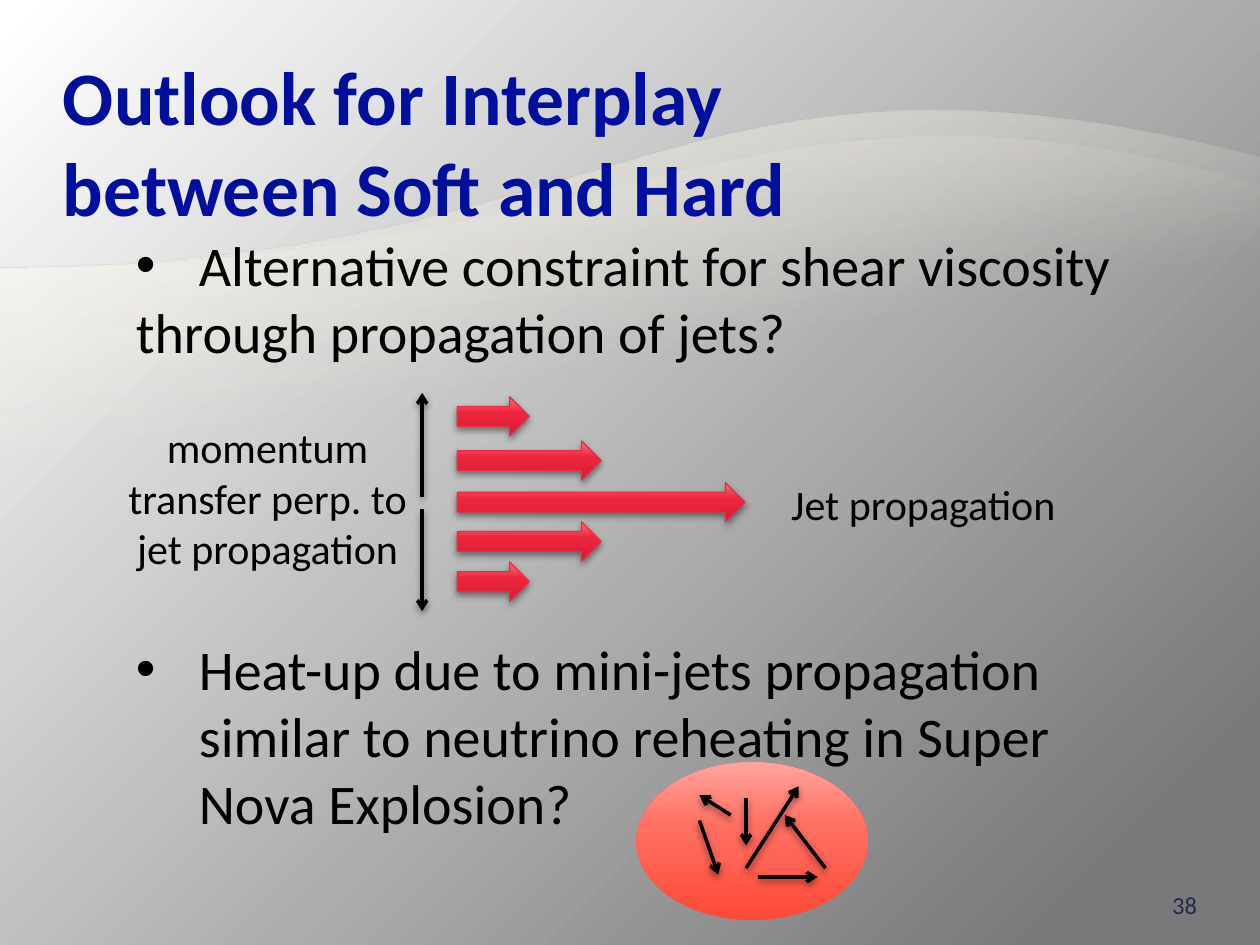
"""Builds the slide on the interplay between soft and hard physics."""
from dataclasses import dataclass, field
from typing import Any

from lxml.etree import SubElement
from pptx import Presentation
from pptx.dml.color import RGBColor
from pptx.enum.shapes import MSO_CONNECTOR as CONN, MSO_SHAPE as SHAPE
from pptx.enum.text import MSO_ANCHOR as ANCHOR, PP_ALIGN as ALIGN
from pptx.oxml.ns import qn
from pptx.util import Cm, Pt

FONT = "Calibri"
BLACK = "000000"
HANG = 1.27
RED_STOPS = [(0, "D71B32"), (60, "ED263E"), (100, "FD727C")]
BALL_STOPS = [(0, "FF4938"), (60, "FF6F61"), (100, "FFA49E")]


@dataclass
class Para:
    text: str
    bullet: bool = False
    fmt: dict[str, Any] = field(default_factory=dict)


@dataclass
class Label:
    box: tuple[float, float, float, float]
    paras: list[Para]
    font: dict[str, Any]
    color: str = BLACK
    frame: dict[str, Any] = field(default_factory=dict)


@dataclass
class Wave:
    start: tuple[float, float]
    controls: tuple[tuple[float, float], tuple[float, float]]
    end: tuple[float, float]
    bottom: float
    stops: list[tuple]


@dataclass
class Jet:
    top: float
    units: int


@dataclass
class Ray:
    x1: float
    y1: float
    x2: float
    y2: float


WAVES = [
    Wave((0, 5.41), ((12.7, 5.41), (13.56, 0.13)), (25.4, 3.18), 18.62,
         [(65, "FFF9E5", 0), (100, "FFFCF1", 55)]),
    Wave((0, 5.41), ((12.7, 5.41), (15.19, 0.79)), (25.4, 3.73), 16.18,
         [(65, "FFF9E5", 0), (100, "FFFDF5", 30)]),
]
JETS = [Jet(8, 1), Jet(8.89, 2), Jet(9.73, 4), Jet(10.52, 2), Jet(11.33, 1)]
RAYS = [
    Ray(8.51, 10.01, 8.51, 7.92),
    Ray(8.51, 10.26, 8.51, 12.32),
    Ray(15.04, 17.5, 16.1, 15.85),
    Ray(16.64, 17.5, 15.82, 16.43),
    Ray(14.1, 16.54, 14.48, 17.63),
    Ray(15.29, 17.68, 16.48, 17.68),
    Ray(14.73, 16.43, 14.1, 16.03),
    Ray(15.04, 16.08, 15.04, 17.04),
]
CENTER = {"alignment": ALIGN.CENTER}
LABELS = [
    Label((1.27, 1.52, 22.86, 3.18),
          [Para("Outlook for Interplay\vbetween Soft and Hard")],
          {"size": Pt(43.2), "bold": True}, "020E9C",
          {"vertical_anchor": ANCHOR.BOTTOM, "margin_left": 0, "margin_right": 0,
           "margin_top": Cm(0.03), "margin_bottom": Cm(0.03)}),
    Label((2.49, 4.52, 21.41, 12.57),
          [Para("Alternative constraint for shear viscosity", True),
           Para("through propagation of jets?"),
           Para("Heat-up due to mini-jets propagation similar to neutrino "
                "reheating in Super Nova Explosion?", True,
                {"space_before": Pt(154)})],
          {"size": Pt(32)}),
    Label((15.7, 9.53, 6.07, 1.27), [Para("Jet propagation")],
          {"size": Pt(24)}, frame={"word_wrap": False}),
    Label((2.31, 8.38, 6.17, 3.33),
          [Para("momentum", fmt=CENTER), Para("transfer perp. to", fmt=CENTER),
           Para("jet propagation", fmt=CENTER)],
          {"size": Pt(24)}, frame={"word_wrap": False}),
    Label((22.66, 17.65, 1.47, 1.02),
          [Para("38", fmt={"alignment": ALIGN.RIGHT})], {"size": Pt(14)}, "242751",
          {"vertical_anchor": ANCHOR.BOTTOM, "margin_right": 0}),
]


def rgb(value: str) -> RGBColor:
    return RGBColor.from_string(value)


def apply(target: Any, fmt: dict[str, Any]) -> None:
    for name, value in fmt.items():
        setattr(target, name, value)


def node(parent: Any, tag: str, **attrs: Any) -> Any:
    return SubElement(parent, qn(tag), {k: str(v) for k, v in attrs.items()})


def color_node(parent: Any, color: str, alpha: int = 100) -> None:
    clr = node(parent, "a:srgbClr", val=color)
    if alpha < 100:
        node(clr, "a:alpha", val=alpha * 1000)


def gradient(fill: Any, root: Any, stops: list[tuple], angle: int | None = None) -> None:
    fill.gradient()
    grad = next(root.iter(qn("a:gradFill")))
    for child in list(grad):
        grad.remove(child)
    stop_list = node(grad, "a:gsLst")
    for pos, *color in stops:
        color_node(node(stop_list, "a:gs", pos=pos * 1000), *color)
    if angle is None:
        circle = node(grad, "a:path", path="circle")
        node(circle, "a:fillToRect", l=0, t=0, r=210000, b=300000)
    else:
        node(grad, "a:lin", ang=angle * 60000, scaled=0)


def add_shadow(sp: Any) -> None:
    effects = node(sp._element.spPr, "a:effectLst")
    shadow = node(effects, "a:outerShdw", blurRad=Pt(4), dist=Pt(2),
                  dir=5400000, rotWithShape=0)
    color_node(shadow, BLACK, 43)


def add_wave(shapes: Any, wave: Wave, steps: int = 60) -> None:
    knots = (wave.start, *wave.controls, wave.end)
    curve = []
    for i in range(steps + 1):
        t = i / steps
        weights = ((1 - t) ** 3, 3 * t * (1 - t) ** 2, 3 * t * t * (1 - t), t ** 3)
        curve.append(tuple(Cm(sum(w * k[axis] for w, k in zip(weights, knots)))
                           for axis in (0, 1)))
    builder = shapes.build_freeform(*curve[0])
    bottom = Cm(wave.bottom)
    builder.add_line_segments([*curve[1:], (Cm(25.4), bottom), (0, bottom)], close=True)
    sp = builder.convert_to_shape()
    sp.shadow.inherit = False
    gradient(sp.fill, sp._element, wave.stops, 260)
    sp.line.fill.background()


def add_ball(shapes: Any) -> None:
    sp = shapes.add_shape(SHAPE.OVAL, Cm(12.83), Cm(15.37), Cm(4.67), Cm(3.18))
    sp.shadow.inherit = False
    gradient(sp.fill, sp._element, BALL_STOPS, 270)
    sp.line.fill.background()


def add_jet(shapes: Any, jet: Jet) -> None:
    sp = shapes.add_shape(SHAPE.RIGHT_ARROW, Cm(9.22), Cm(jet.top),
                          Cm(1.45 * jet.units), Cm(0.79))
    gradient(sp.fill, sp._element, RED_STOPS, 270)
    sp.line.color.rgb = rgb("E72C43")
    sp.line.width = Pt(0.75)
    add_shadow(sp)


def add_ray(shapes: Any, ray: Ray) -> None:
    sp = shapes.add_connector(CONN.STRAIGHT, Cm(ray.x1), Cm(ray.y1), Cm(ray.x2), Cm(ray.y2))
    sp.line.color.rgb = rgb(BLACK)
    sp.line.width = Pt(2)
    node(sp.line._get_or_add_ln(), "a:tailEnd", type="arrow")
    add_shadow(sp)


def add_label(shapes: Any, label: Label) -> None:
    tf = shapes.add_textbox(*map(Cm, label.box)).text_frame
    apply(tf, {"word_wrap": True} | label.frame)
    for i, para in enumerate(label.paras):
        p = tf.add_paragraph() if i else tf.paragraphs[0]
        p.text = para.text
        apply(p, para.fmt)
        for r in p.runs:
            apply(r.font, {"name": FONT} | label.font)
            r.font.color.rgb = rgb(label.color)
        if para.bullet:
            pPr = p._p.get_or_add_pPr()
            pPr.set("marL", str(Cm(HANG)))
            pPr.set("indent", str(-Cm(HANG)))
            node(pPr, "a:buFont", typeface="Arial")
            node(pPr, "a:buChar", char="•")


def main() -> None:
    prs = Presentation()
    prs.slide_width, prs.slide_height = Cm(25.4), Cm(19.05)
    slide = prs.slides.add_slide(prs.slide_layouts[6])
    gradient(slide.background.fill, slide._element,
             [(0, "FFFFFF"), (1, "FFFFFF"), (90, "797979")])
    for wave in WAVES:
        add_wave(slide.shapes, wave)
    add_ball(slide.shapes)
    for draw, items in ((add_jet, JETS), (add_ray, RAYS), (add_label, LABELS)):
        for item in items:
            draw(slide.shapes, item)
    prs.save("out.pptx")


if __name__ == "__main__":
    main()
